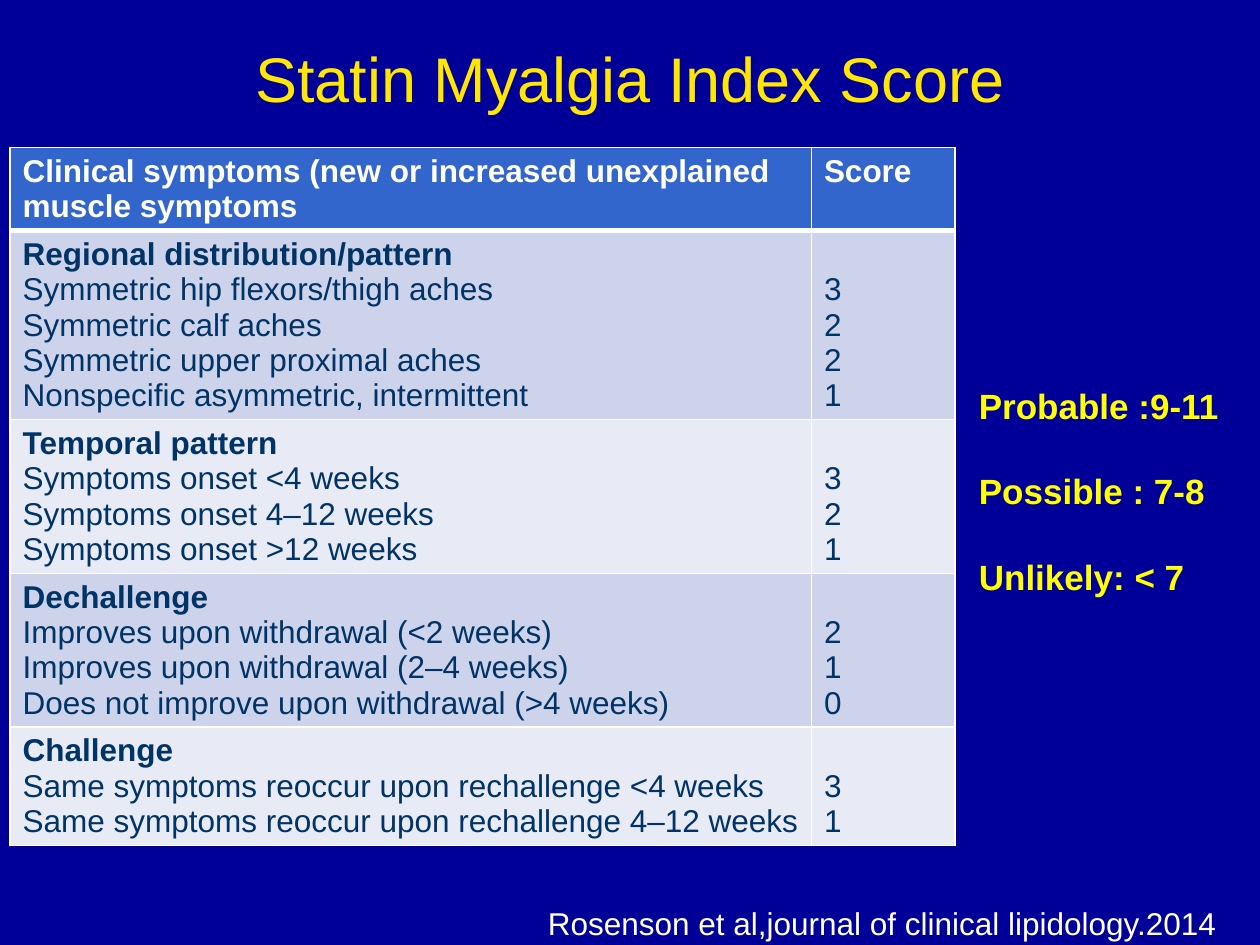
from pptx import Presentation
from pptx.dml.color import RGBColor as RGB
from pptx.enum.text import MSO_ANCHOR as Anchor, PP_ALIGN as Align
from pptx.oxml.ns import qn
from pptx.util import Inches, Pt
from lxml.etree import SubElement as Sub

THEME = dict(font="Arial", back="000099", title="FFE701", head="3366CC",
             bands=("CED3EC", "E8EAF6"), ink="003366", white="FFFFFF",
             key="FFFF00", big=36, mid=20, small=18)
LINE, PAD = 0.28, 0.1  # height of a table line, and padding of a row

HEAD = ("Clinical symptoms (new or increased unexplained muscle symptoms", "Score")
GROUPS = [
    ("Regional distribution/pattern", [
        ("Symmetric hip flexors/thigh aches", 3),
        ("Symmetric calf aches", 2),
        ("Symmetric upper proximal aches", 2),
        ("Nonspecific asymmetric, intermittent", 1)]),
    ("Temporal pattern", [
        ("Symptoms onset <4 weeks", 3),
        ("Symptoms onset 4–12 weeks", 2),
        ("Symptoms onset >12 weeks", 1)]),
    ("Dechallenge", [
        ("Improves upon withdrawal (<2 weeks)", 2),
        ("Improves upon withdrawal (2–4 weeks)", 1),
        ("Does not improve upon withdrawal (>4 weeks)", 0)]),
    ("Challenge", [
        ("Same symptoms reoccur upon rechallenge <4 weeks", 3),
        ("Same symptoms reoccur upon rechallenge 4–12 weeks", 1)]),
]
LEVELS = ["Probable :9-11", "Possible : 7-8", "Unlikely: < 7"]


def write(frame, text, size, color, bold=False):
    frame.text = text
    for para in frame.paragraphs:
        for run in para.runs:
            font = run.font
            font.name, font.size, font.bold = THEME["font"], Pt(size), bold
            font.color.rgb = RGB.from_string(color)


def paint(cell, fill, base=1):
    props = cell._tc.get_or_add_tcPr()
    for side, width in (("L", 1), ("R", 1), ("T", 1), ("B", base)):
        line = Sub(props, qn(f"a:ln{side}"), w=str(Pt(width)))
        Sub(Sub(line, qn("a:solidFill")), qn("a:srgbClr"), val=THEME["white"])
    cell.fill.solid()
    cell.fill.fore_color.rgb = RGB.from_string(fill)


deck = Presentation()
deck.slide_width, deck.slide_height = Inches(10), Inches(7.5)
wide, high = deck.slide_width, deck.slide_height
slide = deck.slides.add_slide(deck.slide_layouts[5])
slide.background.fill.solid()
slide.background.fill.fore_color.rgb = RGB.from_string(THEME["back"])

# Title
title = slide.shapes.title
title.left, title.top = int(wide * 0.05), int(high * 0.04)
title.width, title.height = int(wide * 0.9), Inches(0.62)
write(title.text_frame, "Statin Myalgia Index Score", THEME["big"], THEME["title"])
title.text_frame.vertical_anchor = Anchor.MIDDLE
title.text_frame.paragraphs[0].alignment = Align.CENTER

# Score table: each row is as high as its lines of text
counts = [2] + [1 + len(items) for _, items in GROUPS]
tall = [Inches(PAD + LINE * n) for n in counts]
table = slide.shapes.add_table(len(counts), 2, Inches(0.08), Inches(1.17),
                               Inches(7.5), sum(tall)).table
table.columns[0].width, table.columns[1].width = Inches(6.36), Inches(1.14)
for row, height in zip(table.rows, tall):
    row.height = height

for col, text in enumerate(HEAD):
    cell = table.cell(0, col)
    paint(cell, THEME["head"], 3)
    write(cell.text_frame, text, THEME["small"], THEME["white"], True)

for row, (name, items) in enumerate(GROUPS, 1):
    left, right = table.cell(row, 0), table.cell(row, 1)
    for cell in (left, right):
        paint(cell, THEME["bands"][(row - 1) % 2])
    signs = "\n".join([name] + [sign for sign, _ in items])
    write(left.text_frame, signs, THEME["small"], THEME["ink"])
    left.text_frame.paragraphs[0].runs[0].font.bold = True
    marks = "\n".join(str(mark) for _, mark in items)
    write(right.text_frame, marks, THEME["small"], THEME["ink"])
    right.vertical_anchor = Anchor.BOTTOM  # scores level with their symptoms

# Likelihood key
key = slide.shapes.add_textbox(Inches(7.67), int(high * 0.4),
                               Inches(2.12), Inches(1.77)).text_frame
key.word_wrap = False
write(key, "\n".join(LEVELS), THEME["mid"], THEME["key"], True)
for para in key.paragraphs[1:]:
    para.space_before = Pt(25)

# Citation
cite = slide.shapes.add_textbox(Inches(4.25), int(high * 0.95),
                                Inches(5.55), Inches(0.4)).text_frame
cite.word_wrap = False
write(cite, "Rosenson et al,journal of clinical lipidology.2014",
      THEME["small"], THEME["white"])

deck.save("out.pptx")
